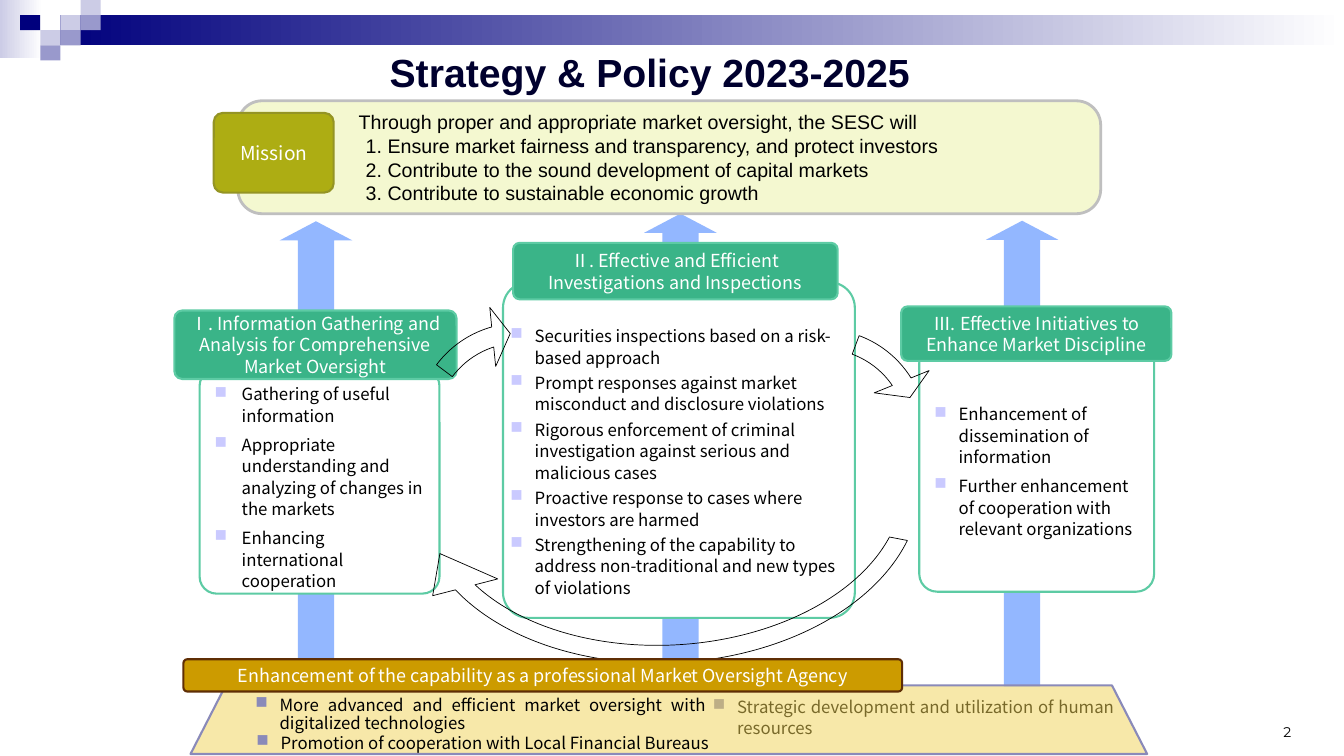
from lxml import etree
from pptx import Presentation
from pptx.dml.color import RGBColor
from pptx.enum.shapes import MSO_SHAPE
from pptx.enum.text import MSO_ANCHOR, PP_ALIGN
from pptx.oxml.ns import qn
from pptx.util import Inches, Pt

RECT, ROUND = MSO_SHAPE.RECTANGLE, MSO_SHAPE.ROUNDED_RECTANGLE
ARROW, CIRCULAR = MSO_SHAPE.RIGHT_ARROW, MSO_SHAPE.CIRCULAR_ARROW
TRAPEZOID = MSO_SHAPE.TRAPEZOID
MIDDLE, BOTTOM = MSO_ANCHOR.MIDDLE, MSO_ANCHOR.BOTTOM
LEFT, CENTER, RIGHT, JUSTIFY = PP_ALIGN.LEFT, PP_ALIGN.CENTER, PP_ALIGN.RIGHT, PP_ALIGN.JUSTIFY
SANS = "Noto Sans CJK JP"
COLORS = {
    "navy": "00007D", "violet": "9999CC", "lilac": "CCCCE6", "white": "FFFFFF",
    "black": "000000", "title": "00002E", "sky": "93B7FF", "cream": "F4F8D0",
    "grey": "BFBFBF", "olive": "ADAD13", "dark olive": "949424", "green": "3AB488",
    "mint": "5DCBA4", "sand": "F0D254", "gold": "CC9B00", "brown": "5F2E05",
    "pale bullet": "CACAFF", "slate": "8A8AB9",
}
RGB = {name: RGBColor.from_string(value) for name, value in COLORS.items()}

# The grid has square cells of a tenth of an inch: 133.33 columns by 75 rows
CELL = Inches(0.1)
COLUMNS, ROWS = 133.33, 75

prs = Presentation()
prs.slide_width, prs.slide_height = int(COLUMNS * CELL), ROWS * CELL
slide = prs.slides.add_slide(prs.slide_layouts[6])


def draw(kind, place, fill=None, line=None, width=1.5, adjust=(), turn=0):
    shape = slide.shapes.add_shape(kind, *[int(cells * CELL) for cells in place])
    shape.shadow.inherit = False
    shape.rotation = turn
    for index, value in enumerate(adjust):
        shape.adjustments[index] = value
    if fill:
        shape.fill.solid()
        shape.fill.fore_color.rgb = RGB[fill]
    else:
        shape.fill.background()
    if line:
        shape.line.color.rgb = RGB[line]
        shape.line.width = Pt(width)
    else:
        shape.line.fill.background()
    return shape


def write(shape, lines, size=12, color="black", font=SANS, bold=False, align=LEFT,
          anchor=MIDDLE, spacing=None, after=0, bullet=None, indents=(0,), hang=0,
          insets=(1, 0.5, 1, 0.5)):
    frame = shape.text_frame
    frame.word_wrap = True
    frame.vertical_anchor = anchor
    (frame.margin_left, frame.margin_top, frame.margin_right,
     frame.margin_bottom) = [int(cells * CELL) for cells in insets]
    for index, line in enumerate(lines):
        paragraph = frame.add_paragraph() if index else frame.paragraphs[0]
        paragraph.alignment = align
        paragraph.space_after = Pt(after)
        if spacing:
            paragraph.line_spacing = Pt(spacing)
        props = paragraph._p.get_or_add_pPr()
        props.set("marL", str(int(indents[min(index, len(indents) - 1)] * CELL)))
        props.set("indent", str(int(-hang * CELL)))
        if bullet:
            tint = etree.SubElement(props, qn("a:buClr"))
            etree.SubElement(tint, qn("a:srgbClr"), val=COLORS[bullet])
            etree.SubElement(props, qn("a:buChar"), char="■")
        run = paragraph.add_run()
        run.text = line
        run.font.size, run.font.bold = Pt(size), bold
        run.font.color.rgb = RGB[color]
        run.font.name = font
        etree.SubElement(run._r.get_or_add_rPr(), qn("a:ea"), typeface=font)


# Header band: two gradients and a mosaic of small tiles
for place, start in (((0, 0, 4.2, 5.8), "lilac"), ((6, 1.5, COLUMNS - 6, 3), "navy")):
    band = draw(RECT, place)
    band.fill.gradient()
    band.fill.gradient_angle = 0
    for stop, tone in zip(band.fill.gradient_stops, (start, "white")):
        stop.color.rgb = RGB[tone]
for column, row, tone in ((3, 1, "lilac"), (4, 0, "lilac"), (4, 1, "violet"),
                          (2, 2, "lilac"), (1, 1, "navy"), (3, 2, "violet"),
                          (2, 3, "violet")):
    draw(RECT, (2 * column, 1.5 * row, 2, 1.5), tone)

# Foundation item that lies under the translucent base
strategic = draw(ROUND, (69.6, 67.9, 42.1, 6.4), adjust=[0.076])
write(strategic, ["Strategic development and utilization of human resources"],
      align=JUSTIFY, spacing=15.4, after=2.6, bullet="slate", indents=[2.4], hang=2.4)

# Upward arrows from the base to the mission
for left, top, length in ((78.3, 41.4, 46.2), (45.3, 39.8, 44.4), (9.2, 40.5, 44.3)):
    draw(ARROW, (left, top, length, 7.2), "sky", adjust=[0.5, 0.263], turn=270)

# Mission
mission = draw(ROUND, (23.6, 10, 85.6, 11.2), "cream", "grey", 2, [0.215])
write(mission, ["Through proper and appropriate market oversight, the SESC will",
                "1. Ensure market fairness and transparency, and protect investors",
                "2. Contribute to the sound development of capital markets",
                "3. Contribute to sustainable economic growth"],
      size=14, font="Arial", spacing=17, indents=(10.3, 11))
mission_label = draw(ROUND, (21.2, 11.2, 11.9, 7.9), "olive", "dark olive", adjust=[0.116])
write(mission_label, ["Mission"], size=13.7, color="white", align=CENTER)

# Three pillars: panel, heading, bullet items
pillars = [
    ((91.2, 34.2, 23.3, 24.5), (89.4, 30.4, 26.8, 5.4),
     "Ⅲ. Effective Initiatives to Enhance Market Discipline",
     ["Enhancement of dissemination of information",
      "Further enhancement of cooperation with relevant organizations"],
     5.1, 2.4, (1, 1, 1, 0.5)),
    ((19.8, 36.6, 23.8, 22.3), (17.3, 30.8, 28, 6.8),
     "Ⅰ. Information Gathering and Analysis for Comprehensive Market Oversight",
     ["Gathering of useful information",
      "Appropriate understanding and analyzing of changes in the markets",
      "Enhancing international cooperation"],
     5.1, 2.7, (1, 1.6, 1, 0.5)),
    ((49.9, 28, 34.9, 33.3), (50.9, 24.1, 32.2, 5.6),
     "Ⅱ. Effective and Efficient Investigations and Inspections",
     ["Securities inspections based on a risk-based approach",
      "Prompt responses against market misconduct and disclosure violations",
      "Rigorous enforcement of criminal investigation against serious and malicious cases",
      "Proactive response to cases where investors are harmed",
      "Strengthening of the capability to address non-traditional and new types of violations"],
     2.6, 2.4, (0, 2.2, 0, 0)),
]
for panel_place, heading_place, heading, items, after, hang, insets in pillars:
    panel = draw(ROUND, panel_place, "white", "mint", adjust=[0.076])
    write(panel, items, spacing=15.4, after=after, bullet="pale bullet",
          indents=[hang], hang=hang, insets=insets)
    label = draw(ROUND, heading_place, "green", "mint", adjust=[0.116])
    write(label, [heading], size=12.8, color="white", align=CENTER, spacing=15.4)

# Return arrow from the third pillar to the first
draw(CIRCULAR, (39, 29.9, 54.8, 38.3), line="black", width=0.5,
     adjust=[0.046, 6.01, 203.36, 116.61, 0.087], turn=176.6)

# Base: translucent trapezoid, banner, items
base = draw(TRAPEZOID, (18.9, 68, 94.9, 6.8), "sand", "slate", adjust=[0.513])
sand = base.fill._xPr.find(qn("a:solidFill"))[0]
etree.SubElement(sand, qn("a:alpha"), val="50000")
banner = draw(ROUND, (18.2, 65.4, 71.3, 3.2), "gold", "brown", adjust=[0.116])
write(banner, ["Enhancement of the capability as a professional Market Oversight Agency"],
      size=12.8, color="white", align=CENTER)
for place, item in (
        ((24.2, 67.5, 47, 6.8),
         "More advanced and efficient market oversight with digitalized technologies"),
        ((24.3, 70.4, 67.1, 6.8), "Promotion of cooperation with Local Financial Bureaus")):
    write(draw(ROUND, place, adjust=[0.076]), [item], align=JUSTIFY, spacing=12.8,
          after=2.6, bullet="slate", indents=[2.4], hang=2.4)

# Arrows from pillar to pillar
for left, top, turn in ((69.4, 30.7, 107), (39.3, 30.1, 33.4)):
    draw(CIRCULAR, (left, top, 24.5, 24.5), line="black", width=0.5,
         adjust=[0.08, 6.55, 131.97, 110.01, 0.12], turn=turn)

# Title and page number
title = slide.shapes.add_textbox(*[int(cells * CELL) for cells in (14.9, 3.3, 99.1, 6.2)])
write(title, ["Strategy & Policy 2023-2025"], size=28, color="title", font="Arial",
      bold=True, align=CENTER, anchor=BOTTOM, insets=(0, 0, 0, 0))
page_number = slide.shapes.add_textbox(*[int(cells * CELL) for cells in (105.8, 68.9, 23.3, 5)])
write(page_number, ["2"], size=10, font="Montserrat", align=RIGHT, anchor=BOTTOM)

prs.save("out.pptx")
